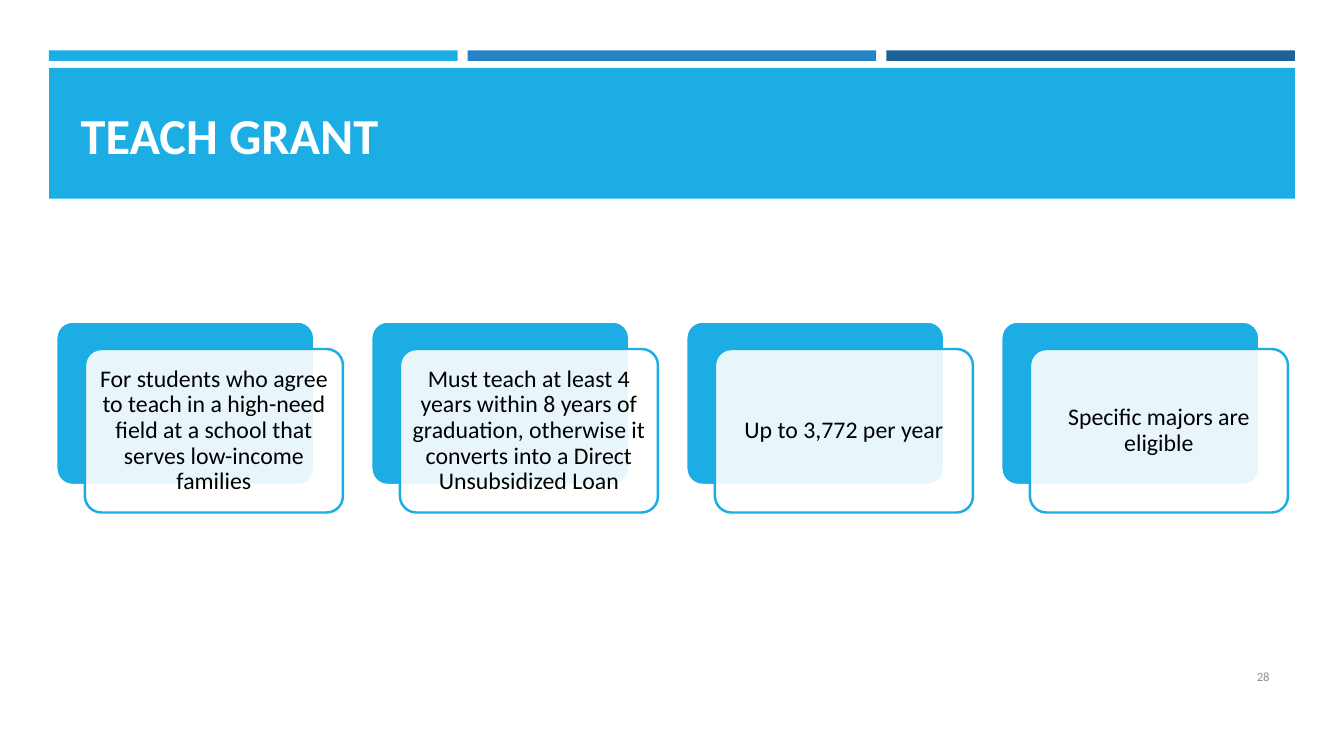
from lxml import etree
from pptx import Presentation
from pptx.dml.color import RGBColor
from pptx.enum.shapes import MSO_SHAPE
from pptx.enum.text import MSO_ANCHOR, PP_ALIGN
from pptx.oxml.ns import qn
from pptx.util import Pt

RECTANGLE = MSO_SHAPE.RECTANGLE
ROUNDED = MSO_SHAPE.ROUNDED_RECTANGLE
MIDDLE, BOTTOM = MSO_ANCHOR.MIDDLE, MSO_ANCHOR.BOTTOM
CENTER, RIGHT = PP_ALIGN.CENTER, PP_ALIGN.RIGHT

SKY = RGBColor(0x1C, 0xAD, 0xE4)
BLUE = RGBColor(0x26, 0x83, 0xC6)
NAVY = RGBColor(0x1C, 0x62, 0x94)
WHITE = RGBColor(0xFF, 0xFF, 0xFF)
BLACK = RGBColor(0, 0, 0)
GRAY = RGBColor(0x8C, 0x8C, 0x8C)

FONT = "Calibri"
GRANT_FACTS = [
    "For students who agree to teach in a high-need field at a school that "
    "serves low-income families",
    "Must teach at least 4 years within 8 years of graduation, otherwise it "
    "converts into a Direct Unsubsidized Loan",
    "Up to 3,772 per year",
    "Specific majors are eligible",
]


def add_block(slide, kind, left, top, width, height, fill, outline=None):
    block = slide.shapes.add_shape(kind, Pt(left), Pt(top), Pt(width), Pt(height))
    block.shadow.inherit = False
    block.fill.solid()
    block.fill.fore_color.rgb = fill
    if outline is None:
        block.line.fill.background()
    else:
        block.line.color.rgb = outline
        block.line.width = Pt(1.75)
    return block


def write(holder, text, size, color, align, anchor, bold=False):
    frame = holder.text_frame
    frame.text = text
    frame.word_wrap = True
    frame.vertical_anchor = anchor
    paragraph = frame.paragraphs[0]
    paragraph.alignment = align
    font = paragraph.runs[0].font
    font.name, font.size, font.bold = FONT, Pt(size), bold
    font.color.rgb = color
    return paragraph


def add_header(slide, left, top, width):
    gap = 7.2
    bar_width = (width - 2 * gap) / 3
    for index, color in enumerate((SKY, BLUE, NAVY)):
        add_block(slide, RECTANGLE, left + index * (bar_width + gap), top,
                  bar_width, 7.5, color)
    add_block(slide, RECTANGLE, left, top + 12.5, width, 93.5, SKY)

    title = slide.shapes.title
    title.left, title.top = Pt(left - 35), Pt(top - 18.5)
    title.width, title.height = Pt(328), Pt(103.5)
    write(title, "TEACH GRANT", 36, WHITE, CENTER, BOTTOM, True)
    slide.shapes._spTree.append(title._element)


def add_fact_card(slide, left, top, width, height, fact):
    offset_x, offset_y = 20.5, 19.6
    size = width - offset_x, height - offset_y
    back = add_block(slide, ROUNDED, left, top, *size, SKY, WHITE)
    front = add_block(slide, ROUNDED, left + offset_x, top + offset_y, *size,
                      WHITE, SKY)
    back.adjustments[0] = front.adjustments[0] = 0.1
    color = front.fill._xPr.find(qn("a:solidFill"))[0]
    etree.SubElement(color, qn("a:alpha")).set("val", "90000")

    frame = front.text_frame
    frame.margin_left = frame.margin_right = Pt(5)
    frame.margin_top = frame.margin_bottom = Pt(5)
    write(front, fact, 17, BLACK, CENTER, MIDDLE).line_spacing = 0.9


def add_fact_row(slide, left, top, pitch):
    for index, fact in enumerate(GRANT_FACTS):
        add_fact_card(slide, left + index * pitch, top, 204.8, 136.4, fact)


def add_page_number(slide, left, top, width, height):
    number = slide.shapes.add_textbox(Pt(left), Pt(top), Pt(width), Pt(height))
    write(number, "28", 9, GRAY, RIGHT, MIDDLE)


def main():
    deck = Presentation()
    deck.slide_width, deck.slide_height = Pt(960), Pt(540)
    slide = deck.slides.add_slide(deck.slide_layouts[5])
    add_header(slide, 35, 36, 890)
    add_fact_row(slide, 40.2, 229.7, 225)
    add_page_number(slide, 831.5, 469, 82.5, 28.5)
    deck.save("out.pptx")


if __name__ == "__main__":
    main()
